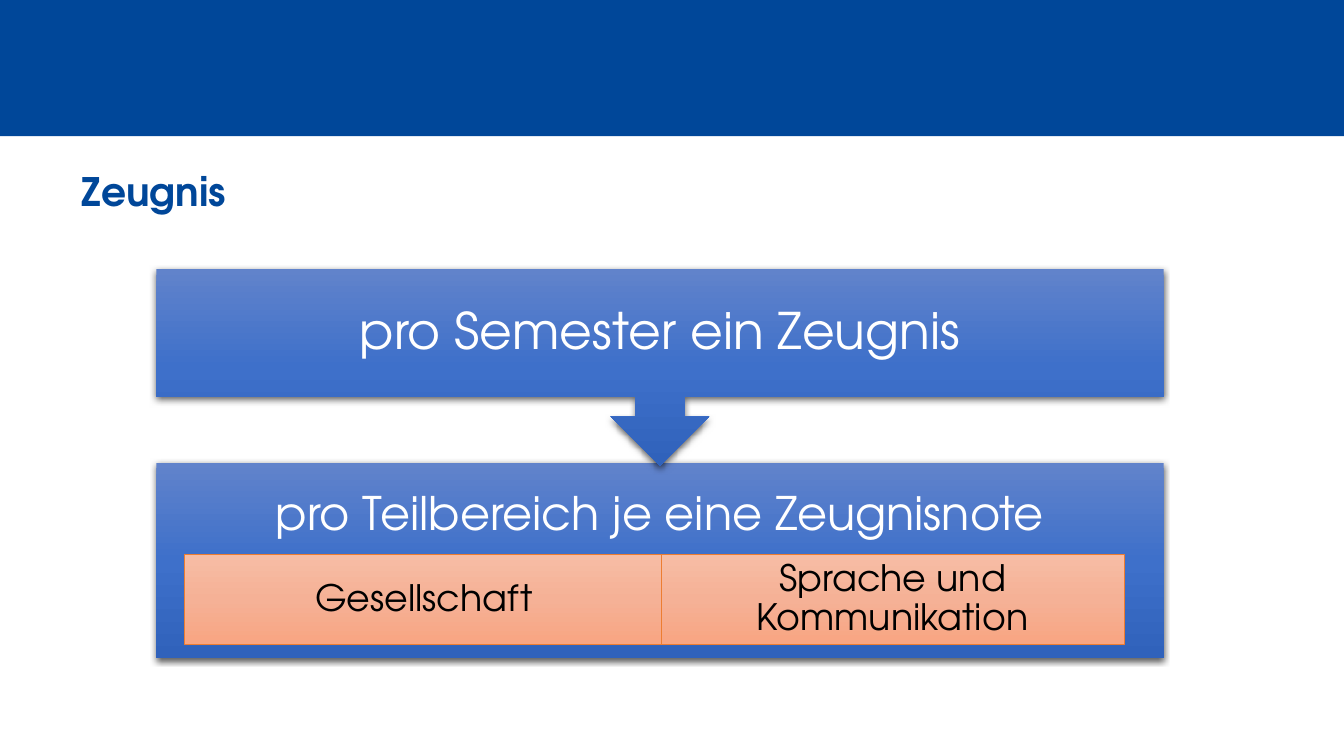
from copy import deepcopy

from lxml.etree import SubElement
from pptx import Presentation
from pptx.dml.color import RGBColor
from pptx.enum.shapes import MSO_SHAPE
from pptx.enum.text import MSO_ANCHOR, PP_ALIGN
from pptx.oxml.ns import qn
from pptx.util import Inches, Pt

FONT = "TeX Gyre Adventor"
BRAND_BLUE = "004799"
BLUE_STOPS = ("6183CB", "3E70CA", "3062BB")
ORANGE_STOPS = ("F7BDA5", "F5B196", "F8A582")
ORANGE_LINE = "ED7D31"


def color(value):
    """Turn a hex string into a colour."""
    return RGBColor.from_string(value)


def write_text(shape, text, size, text_color, bold=False, align=PP_ALIGN.CENTER, margins=None):
    """Write one formatted paragraph into a shape."""
    frame = shape.text_frame
    frame.word_wrap = True
    frame.vertical_anchor = MSO_ANCHOR.MIDDLE
    for side, length in (margins or {}).items():
        setattr(frame, f"margin_{side}", Inches(length))
    paragraph = frame.paragraphs[0]
    paragraph.text = text
    paragraph.alignment = align
    paragraph.line_spacing = 0.9
    font_format = {"name": FONT, "size": Pt(size), "bold": bold}
    for name, value in font_format.items():
        setattr(paragraph.font, name, value)
    paragraph.font.color.rgb = color(text_color)


def add_panel(slide, kind, box, stops):
    """Add a preset shape with a vertical three-stop gradient and no line."""
    shape = slide.shapes.add_shape(kind, *map(Inches, box))
    shape.shadow.inherit = False
    shape.line.fill.background()
    shape.fill.gradient()
    shape.fill.gradient_angle = 270
    stop_list = shape._element.spPr.find(qn("a:gradFill")).find(qn("a:gsLst"))
    stop_list.insert(1, deepcopy(stop_list[0]))
    for index, stop in enumerate(shape.fill.gradient_stops):
        stop.position = index / 2
        stop.color.rgb = color(stops[index])
    return shape


def add_shadow(shape):
    """Give a shape a soft black shadow below it."""
    effects = shape._element.spPr.find(qn("a:effectLst"))
    shadow = SubElement(effects, qn("a:outerShdw"), blurRad=str(Pt(4.5)),
                        dist=str(Pt(1.5)), dir="5400000", algn="ctr", rotWithShape="0")
    black = SubElement(shadow, qn("a:srgbClr"), val="000000")
    SubElement(black, qn("a:alpha"), val="63000")


def add_header(slide, box):
    """Draw the blue band and place the title below it."""
    left, top, width, height = box
    band = slide.shapes.add_shape(MSO_SHAPE.RECTANGLE, *map(Inches, box))
    band.shadow.inherit = False
    band.fill.solid()
    band.fill.fore_color.rgb = color(BRAND_BLUE)
    band.line.fill.background()
    title = slide.shapes.title
    place = {"left": left + 0.71, "top": top + height + 0.33, "width": width - 1.4, "height": 0.48}
    for name, length in place.items():
        setattr(title, name, Inches(length))
    write_text(title, "Zeugnis", 28, BRAND_BLUE, bold=True, align=PP_ALIGN.LEFT)


def add_subject(slide, box, text):
    """Add one orange subject box."""
    subject = add_panel(slide, MSO_SHAPE.RECTANGLE, box, ORANGE_STOPS)
    subject.line.color.rgb = color(ORANGE_LINE)
    subject.line.width = Pt(0.5)
    margins = {"left": 0.2, "right": 0.2, "top": 0.04, "bottom": 0.04}
    write_text(subject, text, 26, "000000", margins=margins)


def add_grades(slide, box):
    """Add the lower panel with its heading and two subject boxes."""
    left, top, width, height = box
    heading_height = 1.05
    panel = add_panel(slide, MSO_SHAPE.RECTANGLE, box, BLUE_STOPS)
    add_shadow(panel)
    margins = {"left": 0.26, "right": 0.26, "top": 0.26, "bottom": height - heading_height + 0.26}
    write_text(panel, "pro Teilbereich je eine Zeugnisnote", 33, "FFFFFF", margins=margins)
    subjects = (
        (0.28, 4.75, "Gesellschaft"),
        (5.01, 4.59, "Sprache und Kommunikation"),
    )
    for offset, subject_width, text in subjects:
        add_subject(slide, (left + offset, top + 0.91, subject_width, 0.89), text)


def add_report(slide, box):
    """Add the upper panel that points down to the grades."""
    callout = add_panel(slide, MSO_SHAPE.DOWN_ARROW_CALLOUT, box, BLUE_STOPS)
    add_shadow(callout)
    margins = dict.fromkeys(("left", "right", "top", "bottom"), 0.28)
    write_text(callout, "pro Semester ein Zeugnis", 36, "FFFFFF", margins=margins)


def main():
    """Build and save the slide."""
    presentation = Presentation()
    presentation.slide_width = Inches(13.33)
    presentation.slide_height = Inches(7.5)
    slide = presentation.slides.add_slide(presentation.slide_layouts[5])
    add_header(slide, (0, 0, 13.33, 1.35))
    add_grades(slide, (1.55, 4.59, 9.99, 1.94))
    add_report(slide, (1.55, 2.67, 9.99, 1.95))
    presentation.save("out.pptx")


if __name__ == "__main__":
    main()
